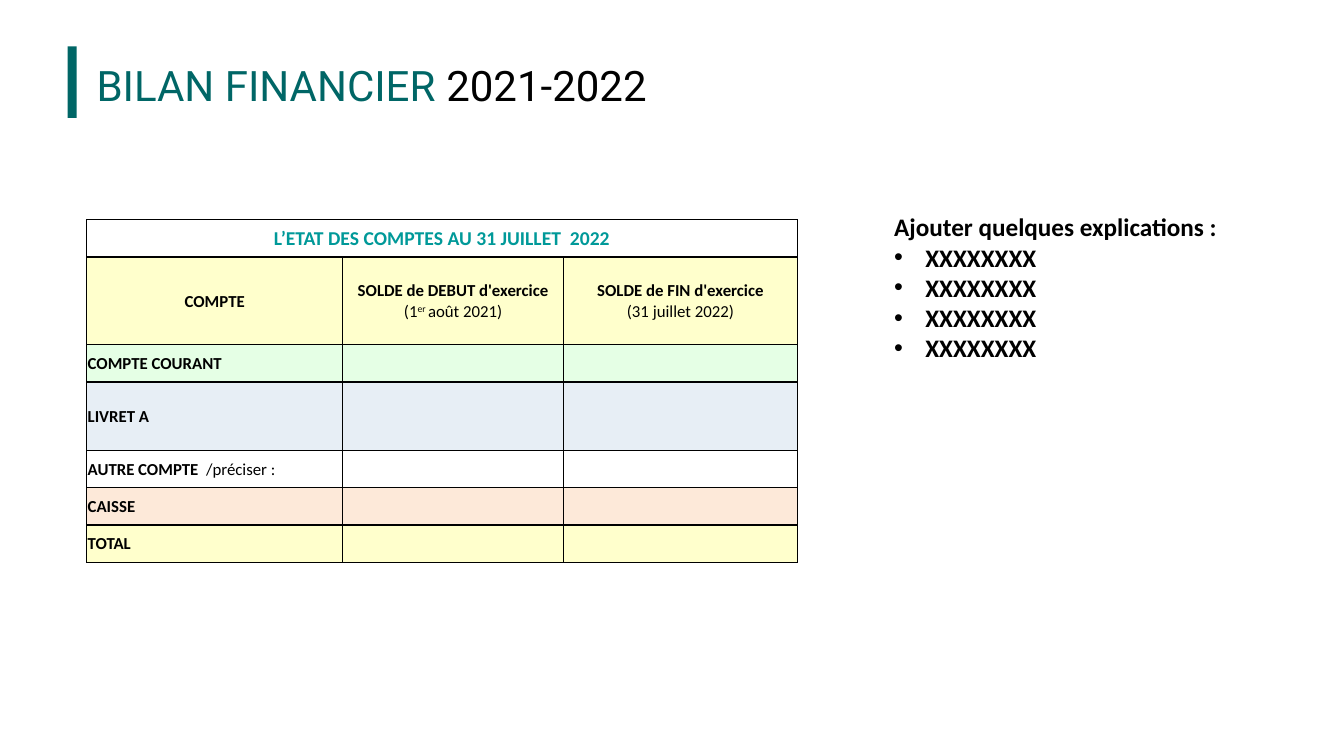
from lxml import etree
from pptx import Presentation
from pptx.dml.color import RGBColor
from pptx.enum.shapes import MSO_SHAPE
from pptx.enum.text import MSO_ANCHOR, MSO_AUTO_SIZE, PP_ALIGN
from pptx.oxml.ns import qn
from pptx.util import Inches, Pt

RECT = MSO_SHAPE.RECTANGLE
MIDDLE = MSO_ANCHOR.MIDDLE
GROW = MSO_AUTO_SIZE.SHAPE_TO_FIT_TEXT
LEFT, CENTER = PP_ALIGN.LEFT, PP_ALIGN.CENTER

# Content: each run is (text, style), each cell a list of lines
BLACK, TEAL, AQUA = "000000", "006666", "009999"
TITLE = [("BILAN FINANCIER ", TEAL), ("2021-2022", BLACK)]
BANNER = "L’ETAT DES COMPTES AU 31 JUILLET  2022"
HEADS = [
    [[("COMPTE", "bold")]],
    [[("SOLDE de DEBUT d'exercice", "bold")],
     [("(1", ""), ("er ", "super"), ("août 2021)", "")]],
    [[("SOLDE de FIN d'exercice", "bold")], [("(31 juillet 2022)", "")]],
]
ROWS = [
    ([("COMPTE COURANT", "bold")], "E5FFE5"),
    ([("LIVRET A", "bold")], "E7EEF5"),
    ([("AUTRE COMPTE ", "bold"), (" /préciser :", "")], None),
    ([("CAISSE", "bold")], "FDE9D9"),
    ([("TOTAL", "bold")], "FFFFCC"),
]
HEAD_FILL = "FFFFCC"
WIDTHS = [2.54, 2.19, 2.32]
HEIGHTS = [0.37, 0.87, 0.37, 0.68, 0.37, 0.37, 0.37]
NOTE = "Ajouter quelques explications :"
POINTS = ["XXXXXXXX"] * 4


def color(code):
    return RGBColor.from_string(code)


def add_run(para, text, size, code, bold=False, font="Calibri"):
    run = para.add_run()
    run.text = text
    run.font.name, run.font.size, run.font.bold = font, Pt(size), bold
    run.font.color.rgb = color(code)
    return run


def add_box(slide, x, y, w, h):
    box = slide.shapes.add_textbox(Inches(x), Inches(y), Inches(w), Inches(h))
    box.text_frame.word_wrap = True
    return box.text_frame


def set_cell(cell, lines, fill, align):
    """Fill one account cell and write its lines."""
    cell.margin_left = cell.margin_right = cell.margin_top = Inches(0.01)
    cell.margin_bottom = 0
    para = cell.text_frame.paragraphs[0]
    para.alignment = align
    para.font.size = Pt(12)
    for i, line in enumerate(lines):
        if i:
            para.add_line_break()
        for text, style in line:
            run = add_run(para, text, 12, BLACK, style == "bold")
            if style == "super":
                run._r.get_or_add_rPr().set("baseline", "30000")
    if fill:
        cell.fill.solid()
        cell.fill.fore_color.rgb = color(fill)


def add_borders(cell):
    props = cell._tc.get_or_add_tcPr()
    for i, side in enumerate(("lnL", "lnR", "lnT", "lnB")):
        line = etree.Element(qn("a:" + side), w=str(Pt(1)))
        solid = etree.SubElement(line, qn("a:solidFill"))
        etree.SubElement(solid, qn("a:srgbClr"), val=BLACK)
        props.insert(i, line)


prs = Presentation()
prs.slide_width, prs.slide_height = Inches(13.33), Inches(7.5)
slide = prs.slides.add_slide(prs.slide_layouts[6])

# Title and its bar
frame = add_box(slide, 0.86, 0.42, 9.17, 0.75)
frame.vertical_anchor = MIDDLE
para = frame.paragraphs[0]
para.line_spacing = 1.2
for text, code in TITLE:
    add_run(para, text, 30, code, font="Roboto")
bar = slide.shapes.add_shape(RECT, Inches(0.67), Inches(0.46),
                             Inches(0.09), Inches(0.71))
bar.shadow.inherit = False
bar.fill.solid()
bar.fill.fore_color.rgb = color(TEAL)
bar.line.fill.background()

# Accounts table
table = slide.shapes.add_table(
    len(HEIGHTS), len(WIDTHS), Inches(0.86), Inches(2.18),
    Inches(sum(WIDTHS)), Inches(sum(HEIGHTS))).table
table.first_row = table.horz_banding = False
for col, width in zip(table.columns, WIDTHS):
    col.width = Inches(width)
for row, height in zip(table.rows, HEIGHTS):
    row.height = Inches(height)
for cell in table.iter_cells():
    cell.vertical_anchor = MIDDLE
    cell.fill.background()
    add_borders(cell)

top = table.cell(0, 0)
top.merge(table.cell(0, len(WIDTHS) - 1))
top.margin_left = top.margin_right = Inches(0.08)
top.margin_top = top.margin_bottom = Inches(0.04)
para = top.text_frame.paragraphs[0]
para.alignment = CENTER
add_run(para, BANNER, 14, AQUA, True)

for c, lines in enumerate(HEADS):
    set_cell(table.cell(1, c), lines, HEAD_FILL, CENTER)
for r, (label, fill) in enumerate(ROWS, 2):
    for c in range(len(WIDTHS)):
        set_cell(table.cell(r, c), [] if c else [label], fill, LEFT)

# Explanations
frame = add_box(slide, 8.77, 2.05, 3.7, 1.62)
frame.auto_size = GROW
add_run(frame.paragraphs[0], NOTE, 18, BLACK, True)
for point in POINTS:
    para = frame.add_paragraph()
    props = para._p.get_or_add_pPr()
    props.set("marL", str(Inches(0.31)))
    props.set("indent", str(-Inches(0.31)))
    etree.SubElement(props, qn("a:buFont"), typeface="Arial")
    etree.SubElement(props, qn("a:buChar"), char="•")
    add_run(para, point, 18, BLACK, True)

prs.save("out.pptx")
